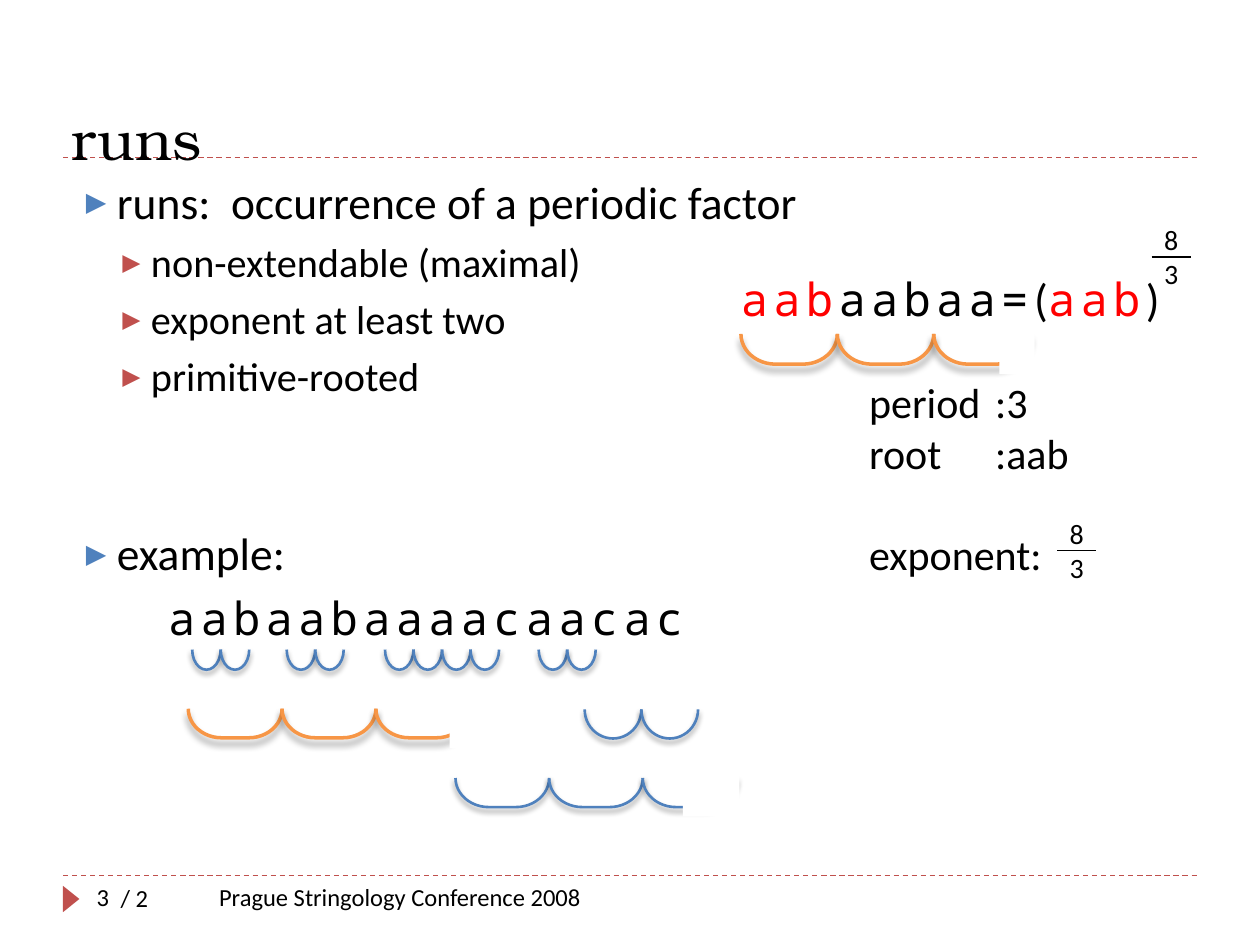
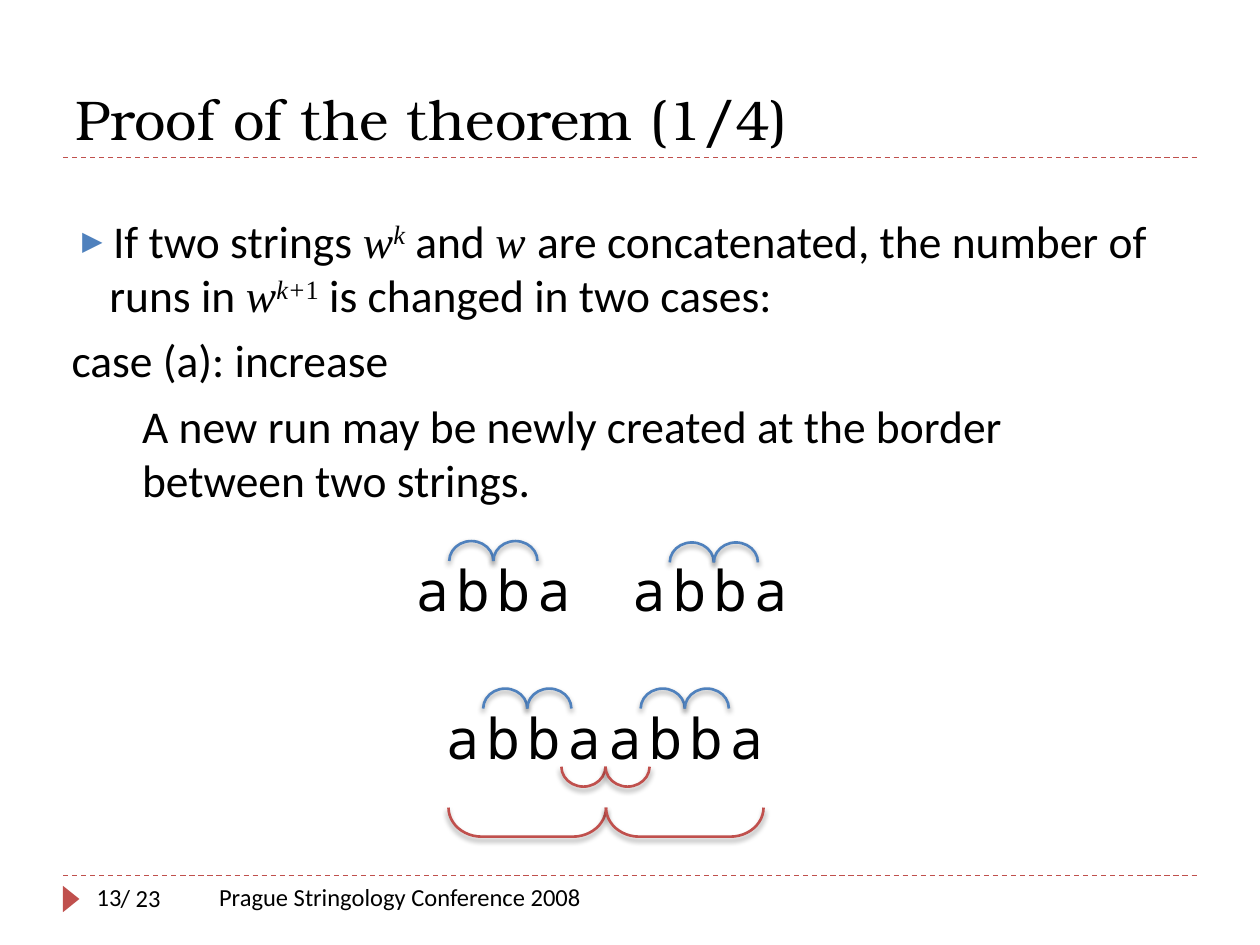
from dataclasses import dataclass

from lxml.etree import SubElement
from pptx import Presentation
from pptx.dml.color import RGBColor
from pptx.enum.dml import MSO_LINE
from pptx.enum.shapes import MSO_CONNECTOR, MSO_SHAPE
from pptx.enum.text import MSO_ANCHOR
from pptx.oxml.ns import qn
from pptx.util import Pt


@dataclass(frozen=True)
class Theme:
    black: str = "000000"
    white: str = "FFFFFF"
    red: str = "C0504D"
    blue: str = "4F81BD"
    orange: str = "F79646"
    highlight: str = "FF0000"
    text_font: str = "Calibri"
    title_font: str = "TeX Gyre Bonum"
    mono_font: str = "Noto Sans Mono"
    math_font: str = "Times New Roman"
    title_size: int = 32
    body_size: int = 26
    detail_size: int = 24
    sub_size: int = 23
    fraction_size: int = 16
    footer_size: int = 14


@dataclass(frozen=True)
class Box:
    left: float
    top: float
    width: float
    height: float

    def inner(self, left, top, width, height):
        return Box(self.left + left, self.top + top, width, height)

    def points(self):
        return [Pt(v) for v in (self.left, self.top, self.width, self.height)]


THEME = Theme()
PAGE = Box(0, 0, 720, 540)
FOOTER = Box(36, 500.4, 648, 39.6)
TITLE_RULE = 90

TEXT = {"name": THEME.text_font, "size": THEME.body_size, "color": THEME.black}
SUB_TEXT = TEXT | {"size": THEME.sub_size}
DETAIL = TEXT | {"size": THEME.detail_size}
FOOTNOTE = TEXT | {"size": THEME.footer_size}
TITLE = TEXT | {"name": THEME.title_font, "size": THEME.title_size}
MONO = TEXT | {"name": THEME.mono_font, "spc": 300}
MONO_RED = MONO | {"color": THEME.highlight}
BIG_MONO = MONO | {"size": THEME.title_size, "spc": 400}
MATH = TEXT | {"name": THEME.math_font, "italic": True}
POWER = MATH | {"baseline": 30000}
POWER_DIGIT = POWER | {"italic": False}

# Line colour, line width, shadow blur and shadow distance of each bracket kind
BLUE_ARC = (THEME.blue, 1.5, 3, 2)
RED_ARC = (THEME.red, 1.5, 3, 2)
ORANGE_ARC = (THEME.orange, 2, 4, 3.4)


def rgb(color):
    return RGBColor.from_string(color)


def add_spans(para, spans):
    """Append (text, format) pairs; a newline in the text breaks the line."""
    for text, style in spans:
        for number, piece in enumerate(text.split("\n")):
            if number:
                para.add_line_break()
            span = para.add_run()
            span.text = piece
            for key, value in style.items():
                if key == "color":
                    span.font.color.rgb = rgb(value)
                elif key in ("spc", "baseline"):
                    span.font._element.set(key, str(value))
                else:
                    setattr(span.font, key, Pt(value) if key == "size" else value)


def set_bullet(para, margin, color):
    """Indent a paragraph; with a colour, hang a triangle bullet before it."""
    props = para._p.get_or_add_pPr()
    props.set("marL", str(Pt(margin)))
    props.set("indent", str(Pt(-21.6 if color else 0)))
    if color is None:
        SubElement(props, qn("a:buNone"))
        return
    SubElement(SubElement(props, qn("a:buClr")), qn("a:srgbClr"), val=color)
    SubElement(props, qn("a:buSzPct"), val="76000")
    SubElement(props, qn("a:buFont"), typeface=THEME.mono_font)
    SubElement(props, qn("a:buChar"), char="▶")


def add_text(page, box, *paragraphs, wrap=True, anchor=MSO_ANCHOR.TOP):
    """Each paragraph is a list of spans, or a dict with spans and spacing."""
    frame = page.shapes.add_textbox(*box.points()).text_frame
    frame.word_wrap = wrap
    frame.vertical_anchor = anchor
    for number, item in enumerate(paragraphs):
        para = frame.add_paragraph() if number else frame.paragraphs[0]
        if isinstance(item, list):
            item = {"spans": item}
        para.space_before = Pt(item.get("before", 0))
        if "margin" in item:
            set_bullet(para, item["margin"], item.get("bullet"))
        add_spans(para, item["spans"])


def point(spans, before=6):
    return {"spans": spans, "before": before, "margin": 21.6, "bullet": THEME.blue}


def sub_point(text):
    return {"spans": [(text, SUB_TEXT)], "before": 5, "margin": 43.2,
            "bullet": THEME.red}


def plain(spans, margin):
    return {"spans": spans, "before": 6, "margin": margin}


def add_rule(page, left, top, width, color, dash=None):
    rule = page.shapes.add_connector(
        MSO_CONNECTOR.STRAIGHT, Pt(left), Pt(top), Pt(left + width), Pt(top))
    rule.line.color.rgb = rgb(color)
    rule.line.width = Pt(0.75)
    if dash:
        rule.line.dash_style = dash
    SubElement(rule._element.spPr, qn("a:effectLst"))


def add_solid(page, kind, box, color):
    shape = page.shapes.add_shape(kind, *box.points())
    shape.shadow.inherit = False
    shape.fill.solid()
    shape.fill.fore_color.rgb = rgb(color)
    shape.line.fill.background()
    return shape


def add_shadow(shape, blur, distance):
    shape.shadow.inherit = False
    effects = shape._element.spPr.find(qn("a:effectLst"))
    shadow = SubElement(effects, qn("a:outerShdw"), blurRad=str(Pt(blur)),
                        dist=str(Pt(distance)), dir="5400000", rotWithShape="0")
    color = SubElement(shadow, qn("a:srgbClr"), val=THEME.black)
    SubElement(color, qn("a:alpha"), val="40000")


def add_arcs(page, box, count, look, above=False):
    """Chain equal brackets rightwards, the first of them filling the box."""
    color, weight, blur, distance = look
    for number in range(count):
        center = box.left + (number + 0.5) * box.width
        middle = box.top + box.height / 2
        upright = Box(center - box.height / 2, middle - box.width / 2,
                      box.height, box.width)
        arc = page.shapes.add_shape(MSO_SHAPE.LEFT_BRACKET, *upright.points())
        arc.adjustments[0] = 1.143
        arc.rotation = 90 if above else 270
        arc.fill.background()
        arc.line.color.rgb = rgb(color)
        arc.line.width = Pt(weight)
        add_shadow(arc, blur, distance)


def add_cut(page, box):
    """Hide the end of a chain whose last period is incomplete."""
    add_solid(page, MSO_SHAPE.RECTANGLE, box, THEME.white)


def add_fraction(page, box, upper, lower):
    style = TEXT | {"size": THEME.fraction_size}
    for text, top in ((upper, 0), (lower, 19.5)):
        add_text(page, box.inner(0, top, box.width, 26.6), [(text, style)], wrap=False)
    add_rule(page, box.left, box.top + 23, box.width, THEME.black)


def add_footer(page, box, number, total):
    add_rule(page, box.left, box.top, box.width, THEME.red, MSO_LINE.DASH)
    marker = add_solid(page, MSO_SHAPE.ISOSCELES_TRIANGLE,
                       box.inner(-2.9, 8.6, 15.1, 9.4), THEME.red)
    marker.rotation = 90
    for text, left, top, width in (
            (f"/ {total}", 25.9, 0.7, 84), (str(number), 12.2, 0, 64),
            ("Prague Stringology Conference 2008", 82.1, 0, 276)):
        add_text(page, box.inner(left, top, width, 28.8), [(text, FOOTNOTE)])


def add_page(deck, title, title_box, number, total):
    page = deck.slides.add_slide(deck.slide_layouts[6])
    add_rule(page, FOOTER.left, TITLE_RULE, FOOTER.width, THEME.red, MSO_LINE.DASH)
    add_text(page, title_box, [(title, TITLE)], anchor=MSO_ANCHOR.BOTTOM)
    add_footer(page, FOOTER, number, total)
    return page


def add_run_formula(page, box):
    add_text(page, box.inner(0, 0, 258.5, 39),
             [("aab", MONO_RED), ("aabaa=", MONO), ("(", TEXT),
              ("aab", MONO_RED), (")", TEXT)])
    add_fraction(page, box.inner(241.9, -27.4, 22.3, 46), "8", "3")
    add_arcs(page, box.inner(7.2, 39.6, 55.1, 17.3), 3, ORANGE_ARC)
    add_cut(page, box.inner(154.8, 38.2, 20.2, 24.5))


def add_run_properties(page, box):
    add_text(page, box, [("period\t:3", DETAIL)], [("root\t:aab", DETAIL)],
             {"spans": [("exponent:", DETAIL)], "before": 29.3})
    add_fraction(page, box.inner(114.5, 79.9, 22.3, 46), "8", "3")


def add_example_arcs(page, box):
    for left, count in ((0, 2), (54, 2), (198, 2), (110.2, 4)):
        add_arcs(page, box.inner(left, 0, 16.3, 11.5), count, BLUE_ARC)
    rows = ((-2.2, 33.8, 53.6, 3, ORANGE_ARC), (150.5, 73.4, 53.5, 3, BLUE_ARC),
            (224.3, 34.2, 32.4, 2, BLUE_ARC))
    for left, top, span, count, look in rows:
        add_arcs(page, box.inner(left, top, span, 16.6), count, look)
    add_cut(page, box.inner(147.2, 28.4, 19.4, 28))
    add_cut(page, box.inner(280.4, 67.3, 32.4, 28))


def build_runs(deck):
    page = add_page(deck, "runs", Box(33.8, 11.5, 648, 90), 3, 2)
    add_text(page, Box(36, 95.8, 648, 388.8),
             point([("runs:  occurrence of a periodic factor", TEXT)]),
             sub_point("non-extendable (maximal)"),
             sub_point("exponent at least two"),
             sub_point("primitive-rooted"),
             point([("example:", TEXT)], before=72),
             plain([("aabaabaaaacaacac", MONO)], 53))
    add_run_formula(page, Box(416.2, 151.2, 264, 63))
    add_run_properties(page, Box(489.6, 211.7, 225.4, 123.8))
    add_example_arcs(page, Box(109.8, 371.2, 313, 96))


def add_separate_strings(page, box):
    for left, arc_left, arc_top in ((0, 26.3, -4.7), (123.8, 152.3, -3.9)):
        add_text(page, box.inner(left, 0, 146.2, 46), [("abba", BIG_MONO)])
        add_arcs(page, box.inner(arc_left, arc_top, 25.2, 11.4), 2, BLUE_ARC, above=True)


def add_joined_string(page, box):
    add_text(page, box.inner(0, 0, 208, 46), [("abbaabba", BIG_MONO)])
    for left in (28.4, 118.4):
        add_arcs(page, box.inner(left, -4.7, 25.2, 11.4), 2, BLUE_ARC, above=True)
    add_arcs(page, box.inner(73.1, 39.9, 25.2, 11.4), 2, RED_ARC)
    add_arcs(page, box.inner(8.6, 63.3, 90, 16.6), 2, RED_ARC)


def build_proof(deck):
    page = add_page(deck, "Proof of the theorem (1/4)", Box(36, 12.2, 648, 77.8), 13, 23)
    add_text(page, Box(33.8, 118.1, 663.8, 191.5),
             point([("If two strings ", TEXT), ("w", MATH), ("k", POWER),
                    (" and ", TEXT), ("w ", MATH),
                    ("are concatenated, the number of runs in ", TEXT),
                    ("w", MATH), ("k+", POWER), ("1", POWER_DIGIT),
                    (" is changed in two cases:", TEXT)]),
             plain([("case (a): increase", TEXT)], 0),
             plain([("A new run may be newly created at the border\n"
                     "between two strings.", TEXT)], 40.3))
    add_separate_strings(page, Box(230.4, 313.9, 270, 46))
    add_joined_string(page, Box(247.7, 398.2, 208, 80))


def main():
    deck = Presentation()
    deck.slide_width, deck.slide_height = Pt(PAGE.width), Pt(PAGE.height)
    build_runs(deck)
    build_proof(deck)
    deck.save("out.pptx")


if __name__ == "__main__":
    main()
